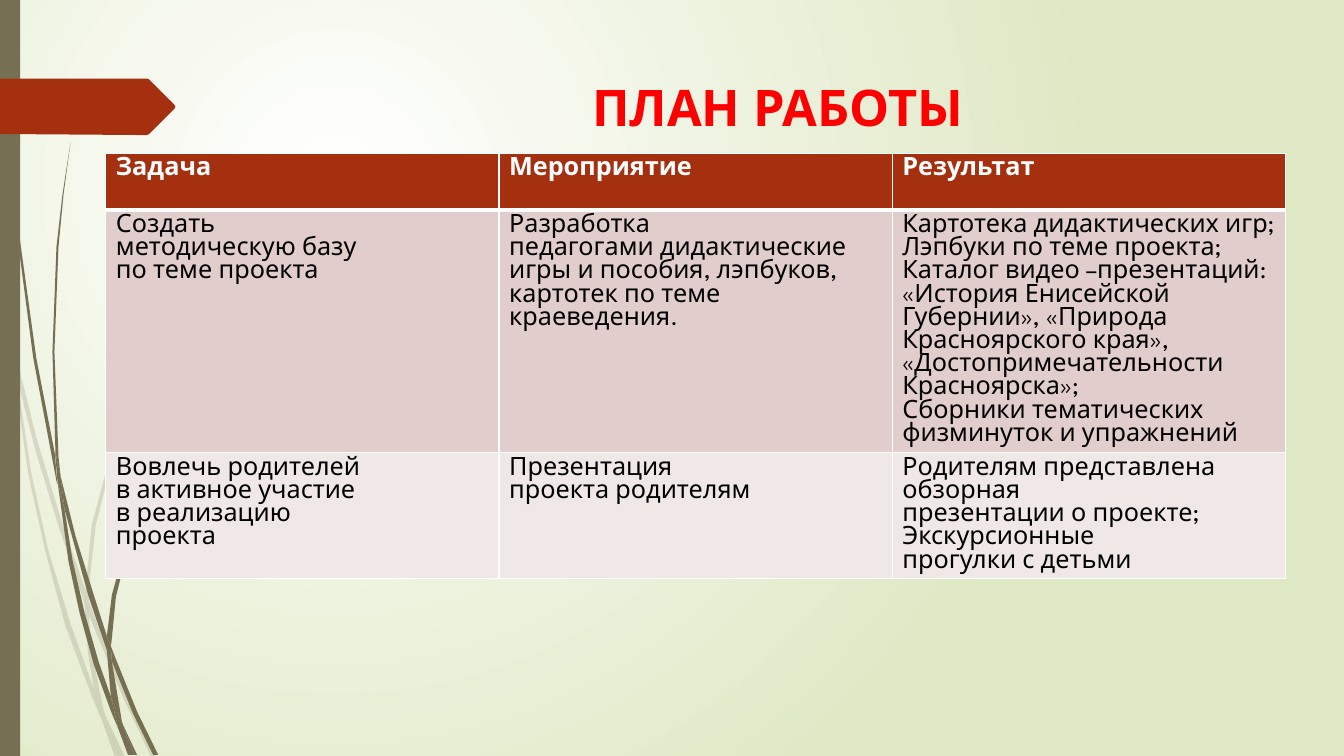
from dataclasses import dataclass

from lxml import etree
from pptx import Presentation
from pptx.dml.color import RGBColor
from pptx.enum.shapes import MSO_SHAPE
from pptx.enum.text import MSO_ANCHOR, MSO_AUTO_SIZE, PP_ALIGN
from pptx.oxml.ns import qn
from pptx.util import Pt

RECTANGLE = MSO_SHAPE.RECTANGLE
CENTER = PP_ALIGN.CENTER
BOTTOM = MSO_ANCHOR.BOTTOM
NO_AUTOFIT = MSO_AUTO_SIZE.NONE
PX = 9144
TITLE_ONLY = 5


@dataclass(frozen=True)
class Theme:
    font: str = "League Spartan"
    title_size: int = 36
    table_size: int = 18
    title: str = "FF0000"
    accent: str = "A53010"
    stem: str = "766F54"
    light: str = "FFFFFF"
    dark: str = "000000"
    backdrop: str = "DFE8C4"
    bands: tuple = ("E1CDCC", "F0E8E7")


class SlideBuilder:
    def __init__(self, deck, theme):
        self.theme = theme
        self.slide = deck.slides.add_slide(deck.slide_layouts[TITLE_ONLY])

    def background(self):
        fill = self.slide.background.fill
        fill.gradient()
        for stop, color, position in zip(
            fill.gradient_stops, (self.theme.light, self.theme.backdrop), (0, 1)
        ):
            stop.color.rgb = RGBColor.from_string(color)
            stop.position = position
        linear = next(self.slide.background._cSld.iter(qn("a:lin")))
        glow = etree.Element(qn("a:path"), path="circle")
        etree.SubElement(glow, qn("a:fillToRect"), l="50000", t="50000", r="100000", b="100000")
        linear.getparent().replace(linear, glow)

    def paint(self, shape, color, opacity=100):
        shape.shadow.inherit = False
        shape.fill.solid()
        shape.fill.fore_color.rgb = RGBColor.from_string(color)
        shape.line.fill.background()
        if opacity < 100:
            tint = next(shape.fill._xPr.iter(qn("a:srgbClr")))
            etree.SubElement(tint, qn("a:alpha"), val=str(opacity * 1000))

    def rectangle(self, left, top, width, height, color):
        box = (length * PX for length in (left, top, width, height))
        self.paint(self.slide.shapes.add_shape(RECTANGLE, *box), color)

    def outline(self, points, color, opacity=100):
        builder = self.slide.shapes.build_freeform(*points[0], scale=PX)
        builder.add_line_segments(points[1:], close=True)
        self.paint(builder.convert_to_shape(), color, opacity)

    def add_words(self, paragraph, words, size, color, bold):
        run = paragraph.add_run()
        run.text = words
        run.font.name = self.theme.font
        run.font.size = Pt(size)
        run.font.bold = bold
        run.font.color.rgb = RGBColor.from_string(color)

    def title(self, words, left, top, width, height):
        heading = self.slide.shapes.title
        heading.left, heading.top = left * PX, top * PX
        heading.width, heading.height = width * PX, height * PX
        frame = heading.text_frame
        frame.auto_size = NO_AUTOFIT
        frame.word_wrap = True
        frame.vertical_anchor = BOTTOM
        frame.paragraphs[0].alignment = CENTER
        self.add_words(frame.paragraphs[0], words, self.theme.title_size, self.theme.title, True)

    def borders(self, cell, **widths):
        properties = cell._tc.get_or_add_tcPr()
        for index, side in enumerate("LRTB"):
            line = etree.Element(qn(f"a:ln{side}"), w=str(Pt(widths.get(side, 1))))
            solid = etree.SubElement(line, qn("a:solidFill"))
            etree.SubElement(solid, qn("a:srgbClr"), val=self.theme.light)
            properties.insert(index, line)

    def table(self, rows, left, top, column_width, row_heights):
        columns = len(rows[0])
        plan = self.slide.shapes.add_table(
            len(rows), columns, left * PX, top * PX,
            columns * column_width * PX, sum(row_heights) * PX,
        ).table
        for column in plan.columns:
            column.width = column_width * PX
        fills = (self.theme.accent, *self.theme.bands)
        for r, (row, height, color) in enumerate(zip(rows, row_heights, fills)):
            plan.rows[r].height = height * PX
            header = r == 0
            ink = self.theme.light if header else self.theme.dark
            for c, lines in enumerate(row):
                cell = plan.cell(r, c)
                cell.fill.solid()
                cell.fill.fore_color.rgb = RGBColor.from_string(color)
                self.borders(cell, T=3 if r == 1 else 1, B=3 if header else 1)
                frame = cell.text_frame
                for i, words in enumerate(lines):
                    paragraph = frame.add_paragraph() if i else frame.paragraphs[0]
                    self.add_words(paragraph, words, self.theme.table_size, ink, header)


PALE_STEMS = [
    [(11, 350), (9, 322), (0, 282), (0, 299), (10, 344)],
    [(58, 522), (84, 599), (85, 586), (62, 520), (36, 434), (14, 345), (17, 376), (36, 450)],
    [(92, 607), (88, 596), (88, 610), (123, 694), (150, 751), (155, 751), (127, 692)],
    [(119, 751), (124, 751), (105, 711)],
    [(93, 683), (70, 619), (48, 546), (31, 469), (17, 376), (11, 350), (28, 470),
     (45, 547), (65, 621), (92, 693), (101, 714), (99, 707)],
    [(84, 599), (87, 646), (93, 683), (96, 692), (105, 711), (103, 706), (91, 646),
     (88, 610), (88, 608)],
    [(88, 584), (95, 521), (110, 462), (132, 405), (160, 349), (192, 296), (229, 245),
     (268, 198), (290, 175), (312, 154), (312, 153), (289, 175), (268, 197), (228, 244),
     (190, 295), (158, 348), (130, 403), (107, 461), (91, 521), (85, 584), (85, 586), (88, 596)],
    [(101, 714), (114, 751), (119, 751)],
    [(88, 608), (88, 610), (88, 596), (85, 586), (84, 599)],
    [(96, 692), (93, 683), (99, 707), (101, 714), (119, 751), (105, 711)],
]
DARK_STEMS = [
    [(7, 110), (17, 233), (33, 355), (56, 477), (57, 481), (55, 457), (55, 453), (36, 355),
     (19, 232), (8, 109), (5, 48), (4, 0), (3, 0), (4, 48)],
    [(88, 592), (106, 645), (106, 631), (93, 590), (75, 532), (60, 472), (64, 505)],
    [(113, 649), (110, 641), (111, 656), (132, 708), (152, 749), (157, 749), (136, 706)],
    [(110, 691), (98, 657), (84, 608), (72, 556), (64, 505), (57, 477), (68, 557),
     (79, 608), (93, 659), (111, 708), (117, 722), (116, 717)],
    [(60, 472), (58, 453), (54, 349), (58, 245), (63, 193), (70, 141), (62, 193),
     (56, 245), (52, 349), (55, 449)],
    [(133, 749), (136, 749), (122, 719)],
    [(57, 477), (64, 505), (60, 472), (55, 449), (55, 453)],
    [(111, 633), (115, 592), (125, 552), (140, 513), (158, 476), (180, 440), (205, 406),
     (231, 374), (245, 359), (261, 344), (260, 344), (245, 358), (231, 373), (204, 405),
     (178, 439), (156, 474), (137, 511), (122, 551), (111, 590), (106, 631), (110, 641)],
    [(117, 722), (127, 749), (131, 749)],
    [(106, 645), (110, 691), (116, 706), (122, 719), (121, 716), (111, 656), (109, 651)],
    [(106, 645), (109, 651), (111, 656), (110, 641), (106, 631)],
    [(116, 706), (110, 691), (116, 717), (117, 722), (130, 749), (133, 749), (122, 719)],
]
RIBBON = [(173, 108), (148, 133), (146, 134), (136, 134), (0, 133), (0, 78), (146, 78),
          (148, 79), (173, 104), (174, 106)]
PLAN = [
    [["Задача"], ["Мероприятие"], ["Результат"]],
    [
        ["Создать", "методическую базу", "по теме проекта"],
        ["Разработка", "педагогами дидактические игры и пособия, лэпбуков,",
         "картотек по теме краеведения."],
        ["Картотека дидактических игр;", "Лэпбуки по теме проекта;",
         "Каталог видео –презентаций:", "«История Енисейской Губернии», «Природа",
         "Красноярского края»,", "«Достопримечательности Красноярска»;",
         "Сборники тематических физминуток и упражнений"],
    ],
    [
        ["Вовлечь родителей", "в активное участие", "в реализацию", "проекта"],
        ["Презентация", "проекта родителям"],
        ["Родителям представлена обзорная", "презентации о проекте; Экскурсионные",
         "прогулки с детьми"],
    ],
]


def main():
    deck = Presentation()
    deck.slide_width, deck.slide_height = 1333 * PX, 750 * PX
    theme = Theme()
    page = SlideBuilder(deck, theme)
    page.background()
    for stems, opacity in ((PALE_STEMS, 20), (DARK_STEMS, 100)):
        for stem in stems:
            page.outline(stem, theme.stem, opacity)
    page.rectangle(0, 0, 20, 750, theme.stem)
    page.outline(RIBBON, theme.accent)
    page.title("ПЛАН РАБОТЫ", 284, 68, 975, 73)
    page.table(PLAN, 105, 152, 390, (56, 241, 124))
    deck.save("out.pptx")


if __name__ == "__main__":
    main()
